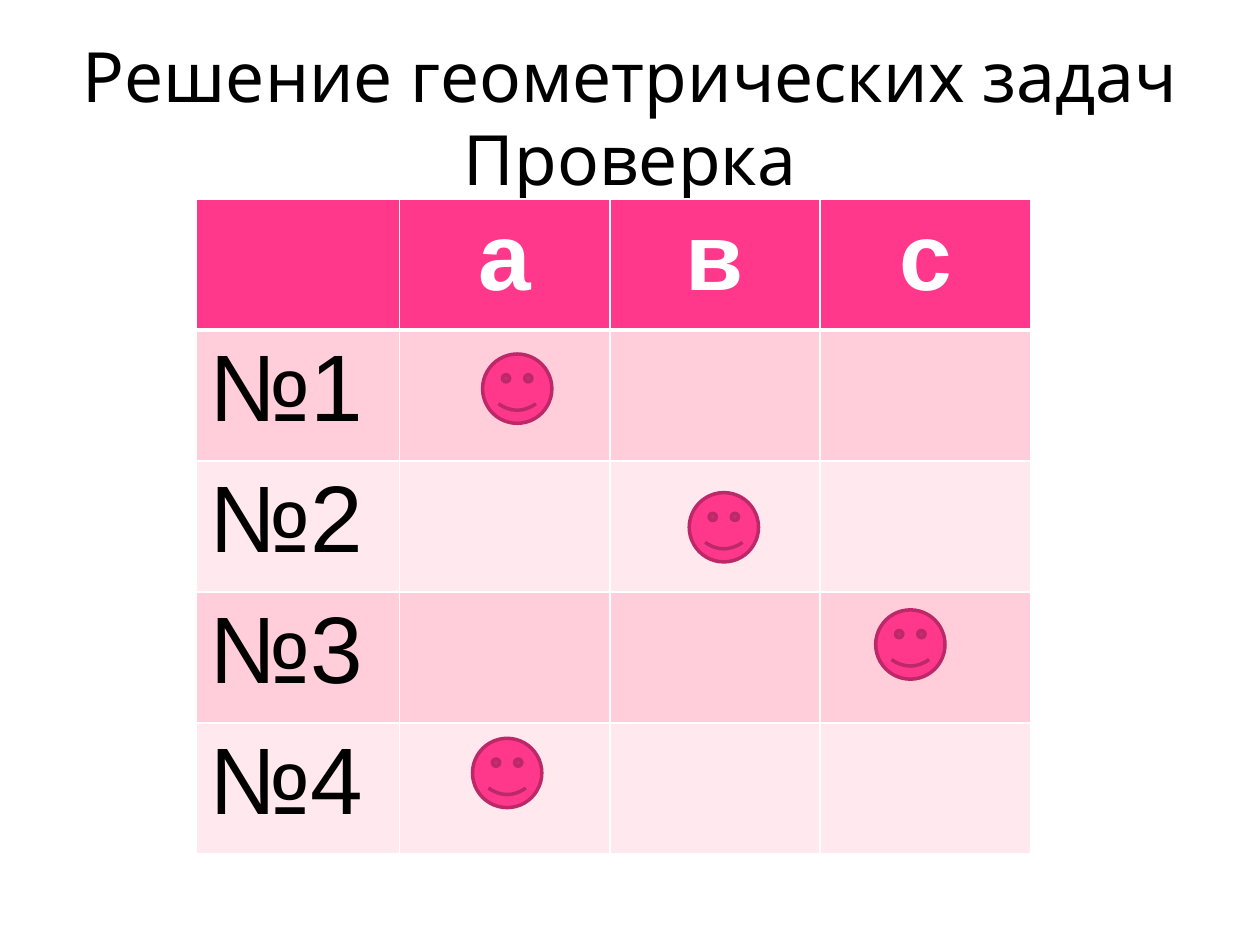
from lxml.etree import SubElement
from pptx import Presentation
from pptx.dml.color import RGBColor
from pptx.enum.shapes import MSO_SHAPE
from pptx.enum.text import MSO_ANCHOR, MSO_AUTO_SIZE, PP_ALIGN
from pptx.oxml.ns import qn
from pptx.util import Inches, Pt

BLACK = RGBColor(0x00, 0x00, 0x00)
WHITE = RGBColor(0xFF, 0xFF, 0xFF)
PINK = RGBColor(0xFF, 0x38, 0x8C)
DARK_PINK = RGBColor(0xBD, 0x29, 0x68)
BANDS = (RGBColor(0xFF, 0xCE, 0xDA), RGBColor(0xFF, 0xE8, 0xEE))

HEADER = ("", "а", "в", "с")
TASKS = ("№1", "№2", "№3", "№4")
COL_WIDTHS = (1.61, 1.67, 1.67, 1.67)
ROW_HEIGHT = 1.04
SMILEY_SIZE = 0.55
ANSWERS = ((3.83, 2.81), (5.47, 3.91), (6.95, 4.84), (3.75, 5.86))


class SlideBuilder:
    title_font = "Noto Sans"
    table_font = "Arial"

    def __init__(self, prs):
        self.slide = prs.slides.add_slide(prs.slide_layouts[5])

    def add_run(self, p, text, font, size, color, bold=False):
        r = p.add_run()
        r.text = text
        r.font.name = font
        r.font.size = Pt(size)
        r.font.bold = bold
        r.font.color.rgb = color

    def add_title(self, text, left, top, width, height):
        sp = self.slide.shapes.title
        sp.left, sp.top = Inches(left), Inches(top)
        sp.width, sp.height = Inches(width), Inches(height)
        tf = sp.text_frame
        tf.word_wrap = True
        tf.auto_size = MSO_AUTO_SIZE.NONE
        tf.vertical_anchor = MSO_ANCHOR.MIDDLE
        p = tf.paragraphs[0]
        p.alignment = PP_ALIGN.CENTER
        self.add_run(p, text, self.title_font, 39.6, BLACK)

    def set_borders(self, cell, **widths):
        """Draw white borders; widths are points by side: L, R, T, B."""
        tc_pr = cell._tc.get_or_add_tcPr()
        for side, width in widths.items():
            ln = SubElement(tc_pr, qn(f"a:ln{side}"), w=str(Pt(width)))
            fill = SubElement(ln, qn("a:solidFill"))
            SubElement(fill, qn("a:srgbClr"), val=str(WHITE))

    def add_table(self, rows, left, top):
        frame = self.slide.shapes.add_table(
            len(rows), len(COL_WIDTHS), Inches(left), Inches(top),
            Inches(sum(COL_WIDTHS)), Inches(ROW_HEIGHT * len(rows)))
        table = frame.table
        for col, width in zip(table.columns, COL_WIDTHS):
            col.width = Inches(width)
        for i, texts in enumerate(rows):
            table.rows[i].height = Inches(ROW_HEIGHT)
            header = i == 0
            for j, text in enumerate(texts):
                cell = table.cell(i, j)
                self.set_borders(cell, L=1, R=1, T=3 if i == 1 else 1,
                                 B=3 if header else 1)
                cell.fill.solid()
                cell.fill.fore_color.rgb = PINK if header else BANDS[(i - 1) % 2]
                if text:
                    p = cell.text_frame.paragraphs[0]
                    p.alignment = PP_ALIGN.CENTER if header else PP_ALIGN.LEFT
                    self.add_run(p, text, self.table_font, 54,
                                 WHITE if header else BLACK, bold=header)

    def add_smiley(self, left, top):
        sp = self.slide.shapes.add_shape(
            MSO_SHAPE.SMILEY_FACE, Inches(left), Inches(top),
            Inches(SMILEY_SIZE), Inches(SMILEY_SIZE))
        sp.shadow.inherit = False
        sp.fill.solid()
        sp.fill.fore_color.rgb = PINK
        sp.line.color.rgb = DARK_PINK
        sp.line.width = Pt(2)


def main():
    prs = Presentation()
    prs.slide_width, prs.slide_height = Inches(10), Inches(7.5)
    builder = SlideBuilder(prs)
    builder.add_title("Решение геометрических задач Проверка", 0.5, 0.3, 9, 1.25)
    builder.add_table([HEADER] + [(task, "", "", "") for task in TASKS], 1.56, 1.58)
    for left, top in ANSWERS:
        builder.add_smiley(left, top)
    prs.save("out.pptx")


if __name__ == "__main__":
    main()
